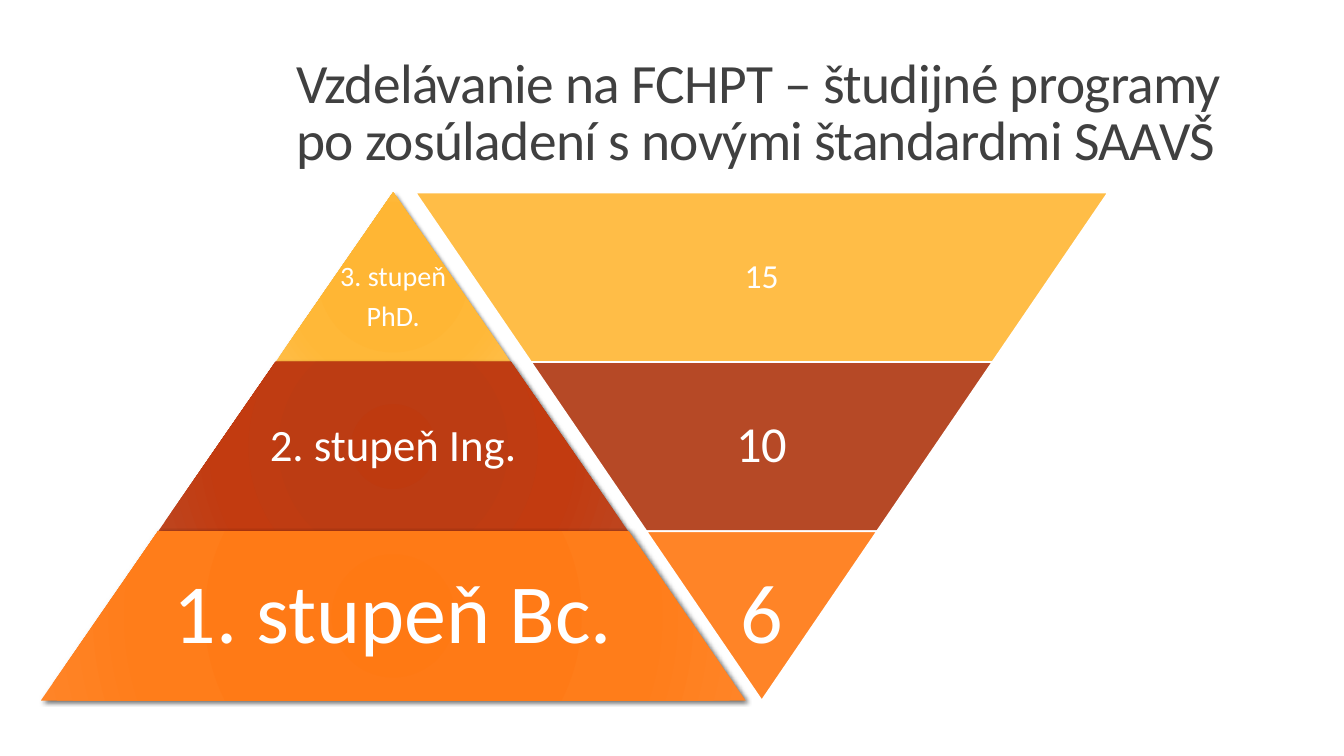
from lxml import etree
from pptx import Presentation
from pptx.dml.color import RGBColor
from pptx.enum.shapes import MSO_SHAPE as SHAPE
from pptx.enum.text import MSO_ANCHOR as ANCHOR, PP_ALIGN as ALIGN
from pptx.oxml import parse_xml
from pptx.oxml.ns import nsdecls
from pptx.util import Inches, Pt

FONT = "Calibri"
ROW_TOP, ROW_H = 1.91, 1.68
PYRAMID = {"center": 3.9, "unit": 2.33, "adj": 0.692}
COUNTS = {"center": 7.555, "unit": 2.29, "adj": 0.682}

# degree lines, size, inset, gradient, programme count, size, inset, solid colour
TIERS = [
    (["3. stupeň", "PhD."], 20, 0.03, ["FFB531", "FFB634", "FFB838", "FFBD47"],
     "15", 24, 0.03, "FFBD47"),
    (["2. stupeň Ing."], 32, 0.04, ["BE3A0F", "BC3C13", "C23B10", "BD451F"],
     "10", 36, 0.05, "B64926"),
    (["1. stupeň Bc."], 60, 0.08, ["FF7913", "FF7A16", "FF7D1A", "FF8427"],
     "6", 60, 0.08, "FF8427"),
]


def rgb(value):
    return RGBColor.from_string(value)


def add_run(p, text, size, color):
    r = p.add_run()
    r.text = text
    r.font.name, r.font.size = FONT, Pt(size)
    r.font.color.rgb = rgb(color)
    return r


def add_box(slide, x, y, w, h, anchor):
    sp = slide.shapes.add_textbox(Inches(x), Inches(y), Inches(w), Inches(h))
    tf = sp.text_frame
    tf.word_wrap = True
    tf.vertical_anchor = anchor
    return tf


def add_title(slide, lines):
    tf = add_box(slide, 2.84, 0.49, 11.87, 1.59, ANCHOR.BOTTOM)
    tf.margin_bottom = Inches(0.38)
    p = tf.paragraphs[0]
    p.line_spacing = 0.85
    for i, line in enumerate(lines):
        if i:
            p.add_line_break()
        r = add_run(p, line, 39.6, "404040")
        r.font._element.set("spc", "-50")


def add_tier(slide, side, row, units):
    """Draw a trapezoid as wide as the given number of units."""
    w = side["unit"] * units
    sp = slide.shapes.add_shape(
        SHAPE.TRAPEZOID, Inches(side["center"] - w / 2),
        Inches(ROW_TOP + ROW_H * row), Inches(w), Inches(ROW_H))
    sp.adjustments[0] = side["adj"]
    sp.shadow.inherit = False
    return sp


def add_label(slide, side, row, units, lines, size, inset):
    w = side["unit"] * units * (1 if units == 1 else 0.65)
    tf = add_box(slide, side["center"] - w / 2, ROW_TOP + ROW_H * row,
                 w, ROW_H, ANCHOR.MIDDLE)
    tf.margin_left = tf.margin_right = tf.margin_bottom = Inches(inset)
    # A two-line label sits lower, where the tip is wide enough
    tf.margin_top = Inches(inset + 0.4 * (len(lines) - 1))
    for i, line in enumerate(lines):
        p = tf.add_paragraph() if i else tf.paragraphs[0]
        p.alignment = ALIGN.CENTER
        p.line_spacing = 0.9
        p.space_after = Pt(0.35 * size)
        add_run(p, line, size, "FFFFFF")


def set_radial_fill(sp, colors):
    stops = "".join(
        f'<a:gs pos="{pos}000"><a:srgbClr val="{color}"/></a:gs>'
        for pos, color in zip((0, 34, 70, 100), colors))
    sp.fill.background()
    old = sp._element.spPr.find("{*}noFill")
    old.getparent().replace(old, parse_xml(
        f'<a:gradFill {nsdecls("a")} rotWithShape="1"><a:gsLst>{stops}</a:gsLst>'
        '<a:path path="circle"><a:fillToRect l="100000" t="100000" '
        'r="100000" b="100000"/></a:path></a:gradFill>'))


def set_drop_shadow(sp):
    effects = sp._element.spPr.find("{*}effectLst")
    shadow = etree.fromstring(
        f'<a:outerShdw {nsdecls("a")} blurRad="{Pt(3)}" dist="{Pt(2)}" '
        'dir="2700000" rotWithShape="0"><a:srgbClr val="000000">'
        '<a:alpha val="60000"/></a:srgbClr></a:outerShdw>')
    effects.append(shadow)


def add_degree(slide, row, lines, size, inset, colors):
    sp = add_tier(slide, PYRAMID, row, row + 1)
    set_radial_fill(sp, colors)
    sp.line.fill.background()
    set_drop_shadow(sp)
    add_label(slide, PYRAMID, row, row + 1, lines, size, inset)


def add_count(slide, row, count, size, inset, color):
    units = len(TIERS) - row
    sp = add_tier(slide, COUNTS, row, units)
    sp.rotation = 180
    sp.fill.solid()
    sp.fill.fore_color.rgb = rgb(color)
    sp.line.color.rgb = rgb("FFFFFF")
    sp.line.width = Pt(1.25)
    add_label(slide, COUNTS, row, units, [count], size, inset)


def main():
    prs = Presentation()
    prs.slide_width, prs.slide_height = Inches(13.33), Inches(7.5)
    slide = prs.slides.add_slide(prs.slide_layouts[6])
    add_title(slide, ["Vzdelávanie na FCHPT – študijné programy",
                      "po zosúladení s novými štandardmi SAAVŠ"])
    for row, tier in enumerate(TIERS):
        add_degree(slide, row, *tier[:4])
    for row, tier in enumerate(TIERS):
        add_count(slide, row, *tier[4:])
    prs.save("out.pptx")


if __name__ == "__main__":
    main()
